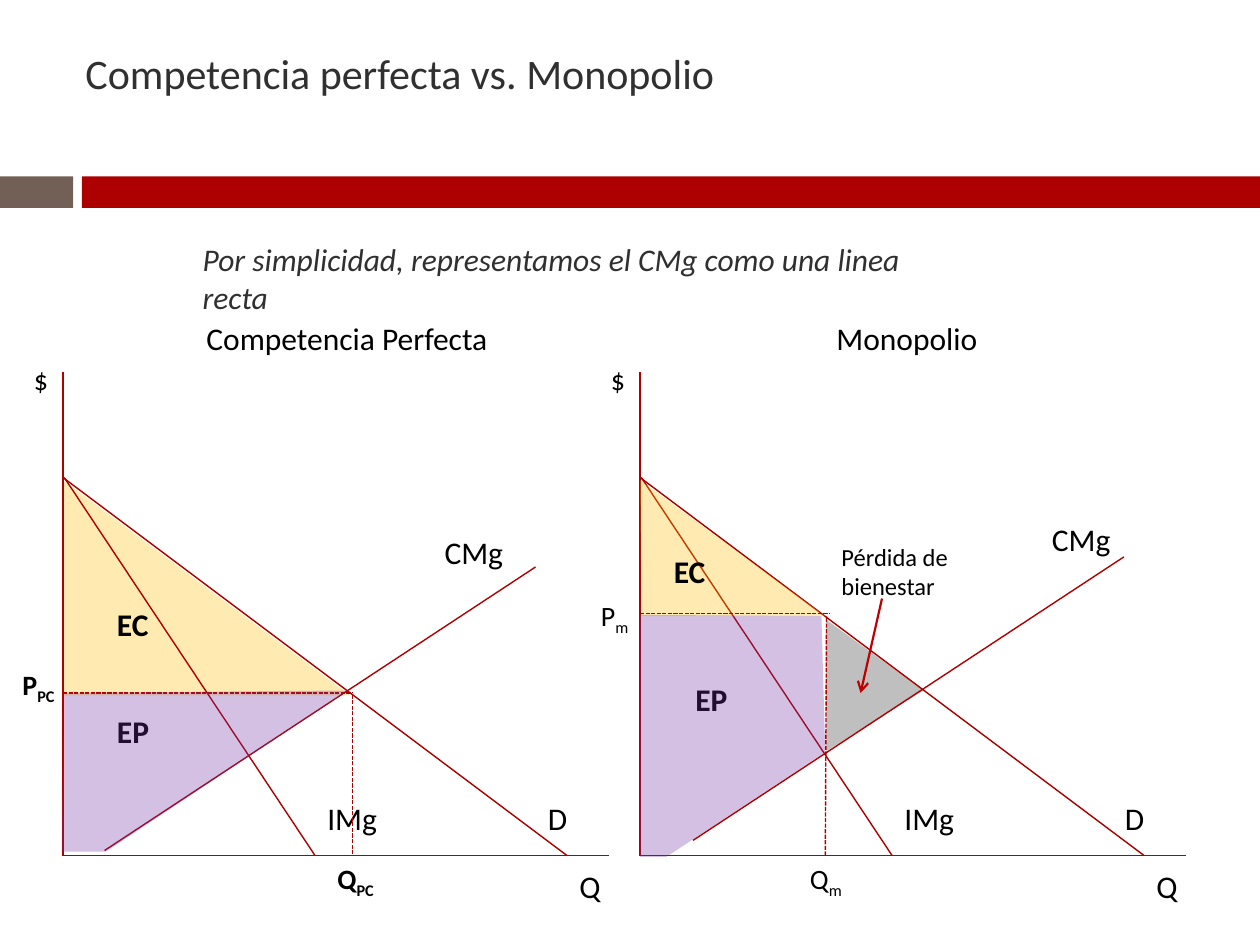
from dataclasses import dataclass

import lxml.etree
import pptx
import pptx.dml.color
import pptx.enum.dml
import pptx.enum.shapes
import pptx.oxml.ns
import pptx.util

RGBColor = pptx.dml.color.RGBColor
RED = RGBColor(0xAD, 0x01, 0x01)
ARROW_RED = RGBColor(0xC0, 0x00, 0x00)
BROWN = RGBColor(0x72, 0x60, 0x56)
GREY = RGBColor(0xBF, 0xBF, 0xBF)
GOLD = RGBColor(0xFF, 0xC0, 0x00)
PURPLE = RGBColor(0x70, 0x30, 0xA0)
DARK = RGBColor(0x30, 0x30, 0x30)
BLACK = RGBColor(0x00, 0x00, 0x00)

SCALE = 9144  # EMU per px, 100 px to the inch
FONT = "Calibri"
Point = tuple[int, int]


@dataclass
class Label:
    text: str
    left: int
    top: int
    width: int
    height: int = 40
    size: int = 18
    subscript: str = ""
    bold: bool = False
    italic: bool = False
    color: RGBColor = BLACK


@dataclass
class Line:
    start: Point
    end: Point
    dashed: bool = False
    arrow: bool = False


@dataclass
class Area:
    points: list[Point]
    color: RGBColor
    opacity: int = 30


def add_child(parent, tag: str, **attributes: str):
    return lxml.etree.SubElement(parent, pptx.oxml.ns.qn(tag), attributes)


def add_bar(slide, left: int, top: int, width: int, height: int, color: RGBColor) -> None:
    bar = slide.shapes.add_shape(
        pptx.enum.shapes.MSO_SHAPE.RECTANGLE,
        left * SCALE, top * SCALE, width * SCALE, height * SCALE)
    bar.shadow.inherit = False
    bar.fill.solid()
    bar.fill.fore_color.rgb = color
    bar.line.fill.background()


def add_area(slide, area: Area) -> None:
    builder = slide.shapes.build_freeform(*area.points[0], scale=SCALE)
    builder.add_line_segments(area.points[1:], close=True)
    shape = builder.convert_to_shape()
    shape.shadow.inherit = False
    shape.line.fill.background()
    shape.fill.solid()
    shape.fill.fore_color.rgb = area.color
    if area.opacity < 100:
        color = shape._element.spPr.find(".//" + pptx.oxml.ns.qn("a:srgbClr"))
        add_child(color, "a:alpha", val=str(area.opacity * 1000))


def add_line(slide, line: Line) -> None:
    connector = slide.shapes.add_connector(
        pptx.enum.shapes.MSO_CONNECTOR.STRAIGHT,
        *(value * SCALE for value in line.start + line.end))
    connector.line.color.rgb = ARROW_RED if line.arrow else RED
    connector.line.width = pptx.util.Pt(1.25 if line.arrow else 0.79)
    if line.dashed:
        connector.line.dash_style = pptx.enum.dml.MSO_LINE.SQUARE_DOT
    if line.arrow:
        add_child(connector.line._get_or_add_ln(), "a:tailEnd", type="arrow")
    add_child(connector._element.spPr, "a:effectLst")


def add_label(slide, label: Label) -> None:
    box = slide.shapes.add_textbox(
        label.left * SCALE, label.top * SCALE, label.width * SCALE, label.height * SCALE)
    box.text_frame.word_wrap = True
    paragraph = box.text_frame.paragraphs[0]
    for text in filter(None, (label.text, label.subscript)):
        run = paragraph.add_run()
        run.text = text
        run.font.name = FONT
        run.font.size = pptx.util.Pt(label.size)
        run.font.bold = label.bold
        run.font.italic = label.italic
        run.font.color.rgb = label.color
    if label.subscript:
        run.font._element.set("baseline", "-25000")


def add_market(slide, left: int) -> None:
    """Axes, demand and marginal revenue, shared by both charts."""
    bottom = 679
    for line in (
        Line((left, 295), (left, bottom)),
        Line((left, bottom), (left + 433, bottom)),
        Line((left, 379), (left + 400, bottom)),
        Line((left + 1, 379), (left + 200, bottom)),
    ):
        add_line(slide, line)
    for label in (
        Label("$", left - 33, 283, 50, 37, 16),
        Label("Q", left + 400, 683, 50),
        Label("D", left + 375, 629, 58),
        Label("IMg", left + 200, 629, 77),
    ):
        add_label(slide, label)


COMPETITION_LEFT, MONOPOLY_LEFT = 50, 508

WELFARE_LOSS = Area([(656, 492), (656, 596), (733, 548)], GREY, 100)
CONSUMER_AREAS = [
    Area([(50, 381), (51, 552), (278, 552)], GOLD),
    Area([(508, 381), (509, 489), (655, 489)], GOLD),
]
PRODUCER_AREAS = [
    Area([(51, 550), (276, 548), (84, 676), (49, 676)], PURPLE),
    Area([(508, 488), (652, 489), (655, 597), (529, 680), (508, 680)], PURPLE),
]
LINES = [
    # Marginal cost
    Line((83, 675), (425, 450)),
    Line((550, 667), (892, 442)),
    # Equilibrium price and quantity
    Line((50, 550), (279, 550), dashed=True),
    Line((280, 678), (280, 549), dashed=True),
    Line((508, 487), (658, 487), dashed=True),
    Line((655, 679), (656, 489), dashed=True),
    # Pointer to the welfare loss
    Line((700, 475), (683, 550), arrow=True),
]
LABELS = [
    Label("Competencia perfecta vs. Monopolio", 58, 33, 600, 50, 24, color=DARK),
    Label("Por simplicidad, representamos el CMg como una linea recta",
          151, 186, 625, italic=True, color=DARK),
    Label("Competencia Perfecta", 154, 248, 300),
    Label("Monopolio", 654, 248, 200),
    # Perfect competition
    Label("CMg", 343, 418, 74),
    Label("EC", 83, 475, 50, bold=True),
    Label("EP", 83, 560, 50, bold=True),
    Label("P", 8, 525, 108, 37, 16, "PC", bold=True),
    Label("Q", 258, 679, 58, 37, 16, "PC", bold=True),
    # Monopoly
    Label("CMg", 825, 408, 92),
    Label("EC", 525, 433, 50, bold=True),
    Label("EP", 542, 535, 50, bold=True),
    Label("P", 467, 470, 108, 37, 16, "m"),
    Label("Q", 633, 679, 58, 37, 16, "m"),
    Label("Pérdida de bienestar", 658, 425, 117, 57, 14),
]


def main() -> None:
    presentation = pptx.Presentation()
    presentation.slide_width = 1000 * SCALE
    presentation.slide_height = 750 * SCALE
    slide = presentation.slides.add_slide(presentation.slide_layouts[6])

    # Header band
    add_bar(slide, 0, 140, 58, 25, BROWN)
    add_bar(slide, 65, 140, 935, 25, RED)

    # Charts, with the producer surplus tinting what lies below it
    add_area(slide, WELFARE_LOSS)
    add_area(slide, CONSUMER_AREAS[0])
    add_market(slide, COMPETITION_LEFT)
    add_market(slide, MONOPOLY_LEFT)
    add_area(slide, CONSUMER_AREAS[1])
    for line in LINES:
        add_line(slide, line)
    for label in LABELS:
        add_label(slide, label)
    for area in PRODUCER_AREAS:
        add_area(slide, area)

    presentation.save("out.pptx")


if __name__ == "__main__":
    main()
